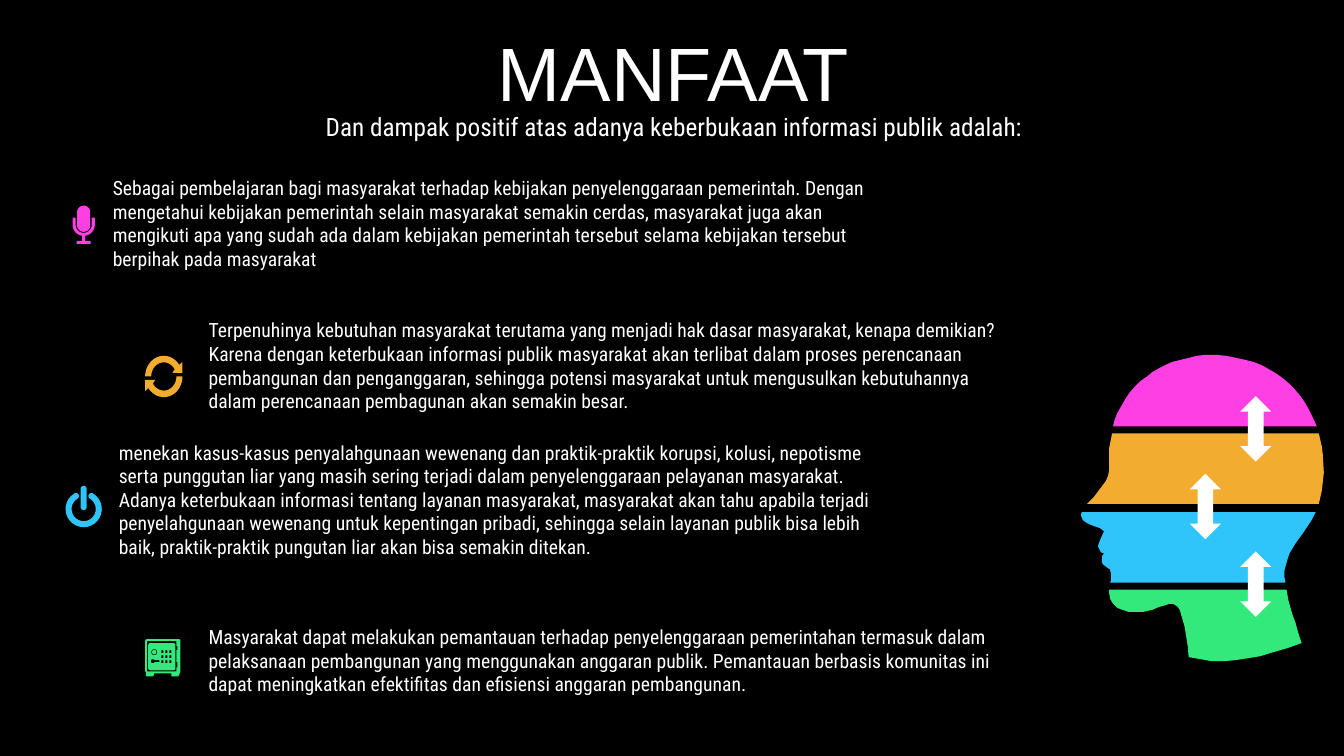
from math import cos, radians, sin

from pptx import Presentation
from pptx.dml.color import RGBColor
from pptx.enum.shapes import MSO_SHAPE as Shape
from pptx.enum.text import MSO_ANCHOR as Anchor, PP_ALIGN as Align
from pptx.util import Inches, Pt

# Content
WHITE, PINK, ORANGE, BLUE, GREEN = "FFFFFF", "FE3FE4", "F2AC30", "2FC5FA", "33E97C"
BODY_FONT = "Roboto Condensed"
TITLE = "MANFAAT"
SUBTITLE = "Dan dampak positif atas adanya keberbukaan informasi publik adalah:"
BENEFITS = [  # left, top, width, height, text
    (1.02, 1.7, 8.02, 1.04,
     "Sebagai pembelajaran bagi masyarakat terhadap kebijakan penyelenggaraan pemerintah. "
     "Dengan mengetahui kebijakan pemerintah selain masyarakat semakin cerdas, masyarakat juga "
     "akan mengikuti apa yang sudah ada dalam kebijakan pemerintah tersebut selama kebijakan "
     "tersebut berpihak pada masyarakat"),
    (1.97, 3.11, 8.02, 1.04,
     "Terpenuhinya kebutuhan masyarakat terutama yang menjadi hak dasar masyarakat, kenapa "
     "demikian? Karena dengan keterbukaan informasi publik masyarakat akan terlibat dalam proses "
     "perencanaan pembangunan dan penganggaran, sehingga potensi masyarakat untuk mengusulkan "
     "kebutuhannya dalam perencanaan pembagunan akan semakin besar."),
    (1.08, 4.32, 7.88, 1.28,
     "menekan kasus-kasus penyalahgunaan wewenang dan praktik-praktik korupsi, kolusi, nepotisme "
     "serta punggutan liar yang masih sering terjadi dalam penyelenggaraan pelayanan masyarakat. "
     "Adanya keterbukaan informasi tentang layanan masyarakat, masyarakat akan tahu apabila "
     "terjadi penyelahgunaan wewenang untuk kepentingan pribadi, sehingga selain layanan publik "
     "bisa lebih baik, praktik-praktik pungutan liar akan bisa semakin ditekan."),
    (1.97, 6.15, 8.4, 0.81,
     "Masyarakat dapat melakukan pemantauan terhadap penyelenggaraan pemerintahan termasuk dalam "
     "pelaksanaan pembangunan yang menggunakan anggaran publik. Pemantauan berbasis komunitas ini "
     "dapat meningkatkan efektifitas dan efisiensi anggaran pembangunan."),
]
HEAD_BANDS = [
    (PINK, [(11.96, 3.52), (12.06, 3.52), (12.16, 3.53), (12.26, 3.55), (12.35, 3.57),
            (12.43, 3.59), (12.51, 3.62), (12.58, 3.66), (12.65, 3.7), (12.72, 3.75),
            (12.78, 3.8), (12.84, 3.86), (12.89, 3.92), (12.94, 3.99), (12.98, 4.06),
            (13.02, 4.14), (13.06, 4.23), (11.04, 4.23), (11.05, 4.18), (11.08, 4.1),
            (11.12, 4.03), (11.16, 3.96), (11.2, 3.9), (11.25, 3.84), (11.31, 3.78),
            (11.37, 3.74), (11.43, 3.69), (11.5, 3.65), (11.56, 3.62), (11.63, 3.59),
            (11.87, 3.53)]),
    (ORANGE, [(11.03, 4.3), (13.08, 4.3), (13.11, 4.43), (13.12, 4.51), (13.13, 4.69),
              (13.12, 4.78), (13.11, 4.87), (13.08, 5), (10.78, 5), (10.85, 4.93),
              (10.91, 4.85), (10.97, 4.77), (10.99, 4.72), (11, 4.67), (11, 4.45),
              (11.01, 4.4)]),
    (BLUE, [(10.73, 5.08), (13.05, 5.08), (13.01, 5.16), (12.93, 5.28), (12.85, 5.39),
            (12.79, 5.49), (12.77, 5.55), (12.74, 5.66), (12.74, 5.73), (12.75, 5.78),
            (11.01, 5.78), (11.02, 5.76), (11.02, 5.7), (11.01, 5.65), (10.98, 5.63),
            (10.94, 5.6), (10.93, 5.58), (10.93, 5.52), (10.95, 5.49), (10.92, 5.48),
            (10.9, 5.44), (10.89, 5.42), (10.91, 5.36), (10.95, 5.27), (10.91, 5.24),
            (10.85, 5.22), (10.78, 5.19), (10.74, 5.16), (10.72, 5.11)]),
    (GREEN, [(11, 5.85), (12.76, 5.85), (12.78, 5.96), (12.82, 6.1), (12.85, 6.18),
             (12.88, 6.29), (12.91, 6.38), (12.77, 6.43), (12.63, 6.47), (12.5, 6.51),
             (12.38, 6.53), (12.25, 6.55), (12.13, 6.56), (12.02, 6.56), (11.91, 6.54),
             (11.79, 6.52), (11.78, 6.41), (11.75, 6.22), (11.71, 6.08), (11.7, 6.05),
             (11.68, 6.02), (11.65, 6), (11.63, 5.99), (11.6, 5.99), (11.54, 6.01),
             (11.5, 6.02), (11.43, 6.05), (11.34, 6.07), (11.19, 6.07), (11.13, 6.05),
             (11.08, 6.03), (11.04, 5.99), (11.01, 5.94), (11, 5.88)]),
]
ARROW_LEFTS, ARROW_TOP, ARROW_PITCH = (12.3, 11.8, 12.3), 3.93, 0.77

deck = Presentation()
deck.slide_width, deck.slide_height = Inches(13.33), Inches(7.5)
page = deck.slides.add_slide(deck.slide_layouts[6])


def paint(fill, color):
    fill.solid()
    fill.fore_color.rgb = RGBColor.from_string(color)


def finish(shape, color):
    shape.shadow.inherit = False
    paint(shape.fill, color)
    shape.line.fill.background()


def add_text(frame, text, size, font=BODY_FONT, align=Align.LEFT):
    box = page.shapes.add_textbox(*map(Inches, frame))
    box.text_frame.word_wrap = True
    box.text_frame.text = text
    para = box.text_frame.paragraphs[0]
    para.alignment = align
    span = para.runs[0]
    span.font.size, span.font.name = Pt(size), font
    span.font.color.rgb = RGBColor.from_string(WHITE)
    return box


def add_outline(color, *contours):
    contours = [[(Inches(x), Inches(y)) for x, y in contour] for contour in contours]
    builder = page.shapes.build_freeform(*contours[0][0])
    for number, contour in enumerate(contours):
        if number:
            builder.move_to(*contour[0])
        builder.add_line_segments(contour[1:], close=True)
    finish(builder.convert_to_shape(), color)


# Contour geometry: angles in degrees, clockwise from the right
def arc(x, y, rx, start, end, ry=None, steps=24):
    angles = [radians(start + (end - start) * i / steps) for i in range(steps + 1)]
    return [(x + rx * cos(a), y + (ry or rx) * sin(a)) for a in angles]


def capsule(x, top, bottom, r):
    return arc(x, top + r, r, 180, 360) + arc(x, bottom - r, r, 0, 180)


def rounded(left, top, right, bottom, r):
    return (arc(left + r, top + r, r, 180, 270, steps=4)
            + arc(right - r, top + r, r, 270, 360, steps=4)
            + arc(right - r, bottom - r, r, 0, 90, steps=4)
            + arc(left + r, bottom - r, r, 90, 180, steps=4))


# Background, title and texts
paint(page.background.fill, "000000")
title = add_text((0.35, 0.37, 12.66, 0.79), TITLE, 54, "Arial", Align.CENTER)
title.text_frame.vertical_anchor = Anchor.MIDDLE
title.text_frame.paragraphs[0].line_spacing = 0.9
title.text_frame.paragraphs[0].space_before = Pt(10)
add_text((1.58, 1.06, 10.21, 0.4), SUBTITLE, 18, align=Align.CENTER)
for *frame, text in BENEFITS:
    add_text(frame, text, 14)

# Microphone icon
holder = (arc(0.83, 2.23, 0.11, 0, 82)
          + [(0.845, 2.39), (0.9, 2.39), (0.9, 2.42), (0.76, 2.42), (0.76, 2.39), (0.815, 2.39)]
          + arc(0.83, 2.23, 0.11, 98, 180) + [(0.72, 2.16), (0.75, 2.16)]
          + arc(0.83, 2.23, 0.08, 180, 0) + [(0.91, 2.16), (0.94, 2.16)])
add_outline(PINK, holder, capsule(0.83, 2.04, 2.3, 0.065))

# Refresh icon: the upper arrow is the lower one turned by half
cx, cy = 1.625, 3.735
lower = (arc(cx, cy, 0.185, 0, 146, 0.205)
         + [(1.44, 3.88), (1.44, 3.77), (1.54, 3.77)]
         + arc(cx, cy, 0.125, 150, 0, 0.14))
upper = [(2 * cx - x, 2 * cy - y) for x, y in lower]
add_outline(ORANGE, lower, upper)

# Power icon
cx, cy, middle, half = 0.83, 5.05, 0.15, 0.03
first, last = -59, 239
ends = [(cx + middle * cos(radians(a)), cy + middle * sin(radians(a))) for a in (first, last)]
ring = (arc(cx, cy, middle + half, first, last) + arc(*ends[1], half, last, last + 180)
        + arc(cx, cy, middle - half, last, first) + arc(*ends[0], half, first + 180, first + 360))
add_outline(BLUE, ring, capsule(cx, 4.82, 5.06, half))

# Safe icon
body = (rounded(1.44, 6.34, 1.79, 6.68, 0.02)[:10]
        + [(1.79, 6.66), (1.77, 6.71), (1.7, 6.71), (1.7, 6.68), (1.53, 6.68),
           (1.52, 6.71), (1.45, 6.71), (1.45, 6.68), (1.44, 6.66)])
gap = [(1.46, 6.36), (1.75, 6.36), (1.75, 6.41), (1.76, 6.41), (1.76, 6.45), (1.75, 6.45),
       (1.75, 6.57), (1.76, 6.57), (1.76, 6.62), (1.75, 6.62), (1.75, 6.66), (1.46, 6.66)]
door = rounded(1.47, 6.38, 1.74, 6.65, 0.02)
dial = [arc(1.53, 6.47, r, 0, 360) for r in (0.03, 0.022)]
handle = arc(1.515, 6.56, 0.02, 30, 330) + [(1.58, 6.55), (1.58, 6.57)]
keys = [rounded(1.6 + 0.04 * col, 6.45 + 0.05 * row, 1.62 + 0.04 * col, 6.48 + 0.05 * row, 0.005)
        for row in range(3) for col in range(3)]
add_outline(GREEN, body, gap, door, *dial, handle, *keys)

# Head in four bands, with arrows across the gaps
for color, points in HEAD_BANDS:
    add_outline(color, points)
for number, left in enumerate(ARROW_LEFTS):
    top = ARROW_TOP + number * ARROW_PITCH
    arrow = page.shapes.add_shape(Shape.UP_DOWN_ARROW, *map(Inches, (left, top, 0.31, 0.65)))
    finish(arrow, WHITE)

deck.save("out.pptx")
